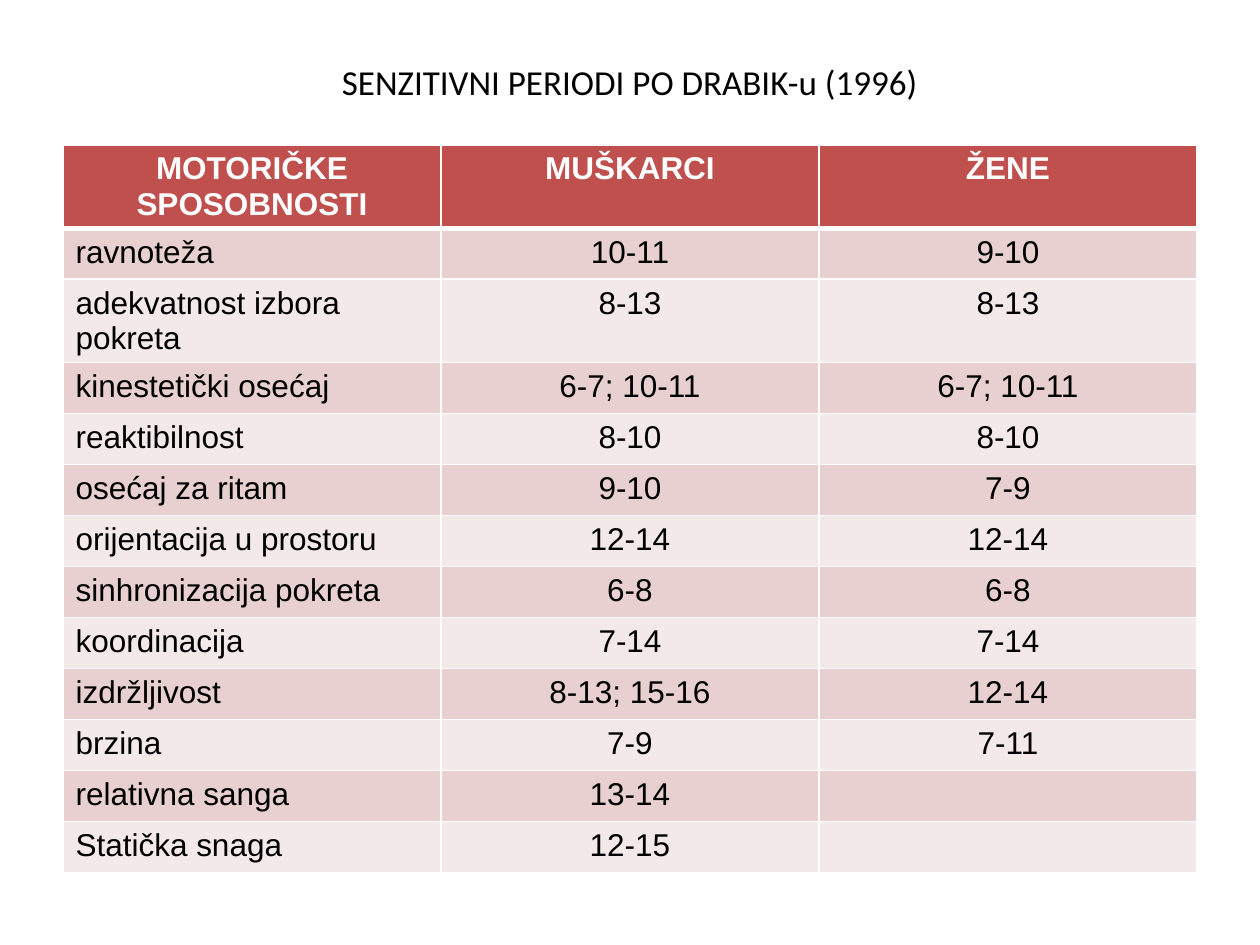
import pptx
import pptx.dml.color
import pptx.enum.text
import pptx.oxml.ns
import pptx.util
import lxml.etree

PX = 914400 / 126
COLORS = {
    "header": "C0504D",
    "odd_row": "E8D0D0",
    "even_row": "F4E9E9",
    "white": "FFFFFF",
    "black": "000000",
}
PERIODS = [
    ("MOTORIČKE SPOSOBNOSTI", "MUŠKARCI", "ŽENE"),
    ("ravnoteža", "10-11", "9-10"),
    ("adekvatnost izbora pokreta", "8-13", "8-13"),
    ("kinestetički osećaj", "6-7; 10-11", "6-7; 10-11"),
    ("reaktibilnost", "8-10", "8-10"),
    ("osećaj za ritam", "9-10", "7-9"),
    ("orijentacija u prostoru", "12-14", "12-14"),
    ("sinhronizacija pokreta", "6-8", "6-8"),
    ("koordinacija", "7-14", "7-14"),
    ("izdržljivost", "8-13; 15-16", "12-14"),
    ("brzina", "7-9", "7-11"),
    ("relativna sanga", "13-14", ""),
    ("Statička snaga", "12-15", ""),
]


def px(length):
    """Turn a length in px into EMU."""
    return pptx.util.Emu(round(length * PX))


def rgb(name):
    """Look up a named colour."""
    return pptx.dml.color.RGBColor.from_string(COLORS[name])


def format_paragraph(paragraph, family, size, color, bold, centered):
    """Set the font and alignment of a whole paragraph."""
    align = pptx.enum.text.PP_ALIGN
    paragraph.alignment = align.CENTER if centered else align.LEFT
    paragraph.font.name = family
    paragraph.font.size = pptx.util.Pt(size)
    paragraph.font.bold = bold
    paragraph.font.color.rgb = rgb(color)


def add_borders(cell, row):
    """Draw white cell borders, heavier between the header and the body."""
    widths = {"lnL": 1, "lnR": 1, "lnT": 3 if row == 1 else 1, "lnB": 3 if row == 0 else 1}
    properties = cell._tc.get_or_add_tcPr()
    qn = pptx.oxml.ns.qn
    for side, width in widths.items():
        line = lxml.etree.SubElement(properties, qn(f"a:{side}"), w=str(pptx.util.Pt(width)))
        fill = lxml.etree.SubElement(line, qn("a:solidFill"))
        lxml.etree.SubElement(fill, qn("a:srgbClr"), val=COLORS["white"])


def place_title(slide, left, top, width, height):
    """Place the slide title in the given box."""
    title = slide.shapes.title
    title.left, title.top, title.width, title.height = map(px, (left, top, width, height))
    title.text_frame.text = "SENZITIVNI PERIODI PO DRABIK-u (1996)"
    title.text_frame.vertical_anchor = pptx.enum.text.MSO_ANCHOR.MIDDLE
    format_paragraph(title.text_frame.paragraphs[0], "Calibri", 20, "black", False, True)


def place_periods_table(slide, left, top, width, row_height):
    """Place the table of sensitive periods with equal columns."""
    row_count, column_count = len(PERIODS), len(PERIODS[0])
    box = map(px, (left, top, width, row_height * row_count))
    table = slide.shapes.add_table(row_count, column_count, *box).table
    for row, entries in enumerate(PERIODS):
        is_header = row == 0
        row_fill = "header" if is_header else "odd_row" if row % 2 else "even_row"
        for column, entry in enumerate(entries):
            cell = table.cell(row, column)
            cell.text = entry
            add_borders(cell, row)
            cell.fill.solid()
            cell.fill.fore_color.rgb = rgb(row_fill)
            format_paragraph(cell.text_frame.paragraphs[0], "Arial", 18,
                             "white" if is_header else "black", is_header,
                             is_header or column > 0)


def main():
    """Build and save the slide."""
    presentation = pptx.Presentation()
    presentation.slide_width, presentation.slide_height = px(1260), px(945)
    slide = presentation.slides.add_slide(presentation.slide_layouts[5])
    place_title(slide, 63, 38, 1134, 87)
    place_periods_table(slide, 63, 145, 1134, 51)
    presentation.save("out.pptx")


if __name__ == "__main__":
    main()
